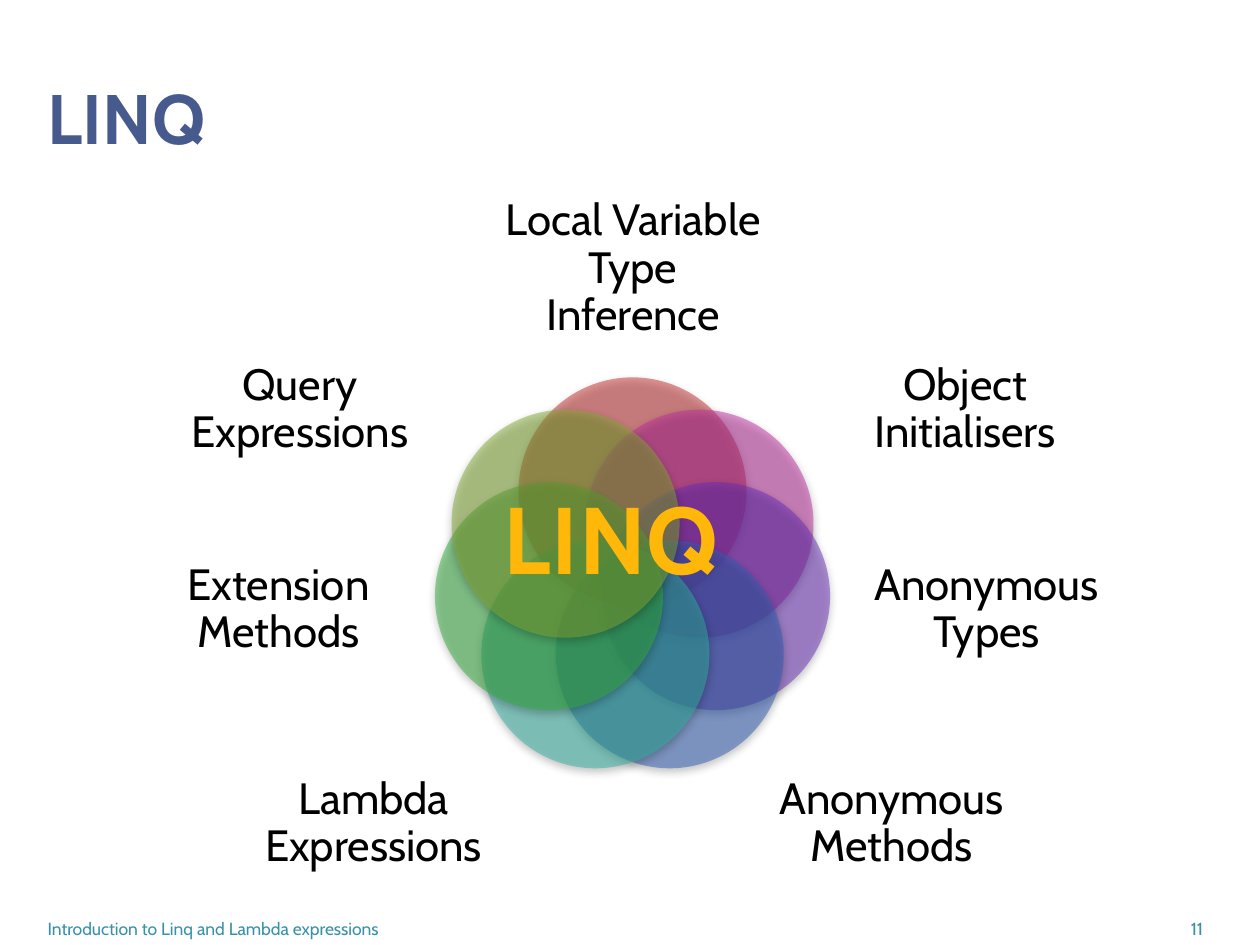
from math import cos, pi, sin

from lxml import etree
from pptx import Presentation
from pptx.dml.color import RGBColor
from pptx.enum.shapes import MSO_SHAPE
from pptx.enum.text import MSO_ANCHOR, MSO_AUTO_SIZE, PP_ALIGN
from pptx.oxml import parse_xml
from pptx.oxml.ns import qn
from pptx.util import Pt

PX = 9144  # 100 px to the inch
FONT = "Cabin"
NS = "http://schemas.openxmlformats.org/drawingml/2006/main"
OVAL = MSO_SHAPE.OVAL
LEFT, CENTER = PP_ALIGN.LEFT, PP_ALIGN.CENTER
MIDDLE, BOTTOM = MSO_ANCHOR.MIDDLE, MSO_ANCHOR.BOTTOM

NAVY = RGBColor(0x47, 0x5A, 0x8D)
TEAL = RGBColor(0x38, 0x91, 0xA7)
BLACK = RGBColor(0, 0, 0)
GOLD = RGBColor(0xFF, 0xB8, 0x09)

# Clockwise from the top: text, petal colour
PETALS = [
    ("Local Variable Type Inference", RGBColor(0xC3, 0x2D, 0x2E)),
    ("Object Initialisers", RGBColor(0xBF, 0x2E, 0xA0)),
    ("Anonymous Types", RGBColor(0x6C, 0x2F, 0xBA)),
    ("Anonymous Methods", RGBColor(0x30, 0x5E, 0xB6)),
    ("Lambda Expressions", RGBColor(0x31, 0xB2, 0xA2)),
    ("Extension Methods", RGBColor(0x32, 0xAE, 0x3E)),
    ("Query Expressions", RGBColor(0x84, 0xAA, 0x33)),
]
# Label boxes from the top down the right side: offset from the
# ring's axis, top, width, height; the left side mirrors them
SLOTS = [(-103, 0, 207, 111), (166, 106, 196, 122),
         (185, 261, 192, 130), (102, 436, 207, 119)]
SHADOW = (f'<a:effectLst xmlns:a="{NS}"><a:outerShdw blurRad="63500" '
          'dist="25400" dir="5400000" rotWithShape="0"><a:srgbClr '
          'val="000000"><a:alpha val="43000"/></a:srgbClr>'
          '</a:outerShdw></a:effectLst>')


def emu(*box):
    return [round(v * PX) for v in box]


def write(shape, text, size, color, align=LEFT, anchor=MIDDLE, bold=False):
    frame = shape.text_frame
    frame.word_wrap = True
    frame.auto_size = MSO_AUTO_SIZE.NONE
    frame.vertical_anchor = anchor
    para = frame.paragraphs[0]
    para.text = text
    para.alignment = align
    font = para.font
    font.name, font.size, font.bold = FONT, Pt(size), bold
    font.color.rgb = color
    return frame


def add_text(slide, box, *args, **style):
    return write(slide.shapes.add_textbox(*emu(*box)), *args, **style)


def add_title(slide, box, text):
    title = slide.shapes.title
    title.left, title.top, title.width, title.height = emu(*box)
    write(title, text, 40, NAVY, bold=True)


def add_petal(slide, box, color):
    petal = slide.shapes.add_shape(OVAL, *emu(*box))
    petal.fill.solid()
    petal.fill.fore_color.rgb = color
    petal.line.fill.background()
    tint = petal.fill._xPr.find(qn("a:solidFill"))[0]
    etree.SubElement(tint, qn("a:alpha")).set("val", "50000")
    petal._element.spPr.append(parse_xml(SHADOW))


def add_label(slide, box, text):
    frame = add_text(slide, box, text, 25, BLACK, align=CENTER)
    frame.margin_left = frame.margin_right = 0
    frame.margin_top = frame.margin_bottom = 0
    frame.paragraphs[0].line_spacing = 0.9


def add_ring(slide, box):
    left, top, width, _ = box
    mid_x, mid_y = left + width / 2, top + 300
    radius, size = 68, 181
    count = len(PETALS)
    for i, (text, color) in enumerate(PETALS):
        turn = 2 * pi * i / count
        x = mid_x + radius * sin(turn) - size / 2
        y = mid_y - radius * cos(turn) - size / 2
        add_petal(slide, (x, y, size, size), color)

        off, drop, wide, high = SLOTS[min(i, count - i)]
        if i > count // 2:
            off = -off - wide
        add_label(slide, (mid_x + off, top + drop, wide, high), text)

    # Word over the petals
    frame = add_text(slide, (mid_x - 112, top + 218, 225, 101),
                     "LINQ", 54, GOLD, anchor=MSO_ANCHOR.TOP, bold=True)
    frame.word_wrap = False
    frame.auto_size = MSO_AUTO_SIZE.SHAPE_TO_FIT_TEXT
    frame.paragraphs[0].runs[0].font._element.set("spc", "50")


def add_footer(slide, box, text, number):
    left, top, width, height = box
    add_text(slide, (left, top, 693, height), text, 10, TEAL, anchor=BOTTOM)
    add_text(slide, (left + width - 50, top, 50, height), number, 10, TEAL,
             align=CENTER, anchor=BOTTOM)


def main():
    deck = Presentation()
    deck.slide_width, deck.slide_height = emu(1000, 750)
    slide = deck.slides.add_slide(deck.slide_layouts[5])
    add_title(slide, (28, 30, 949, 125), "LINQ")
    add_footer(slide, (28, 721, 947, 29),
               "Introduction to Linq and Lambda expressions", "11")
    add_ring(slide, (125, 158, 754, 555))
    deck.save("out.pptx")


if __name__ == "__main__":
    main()
